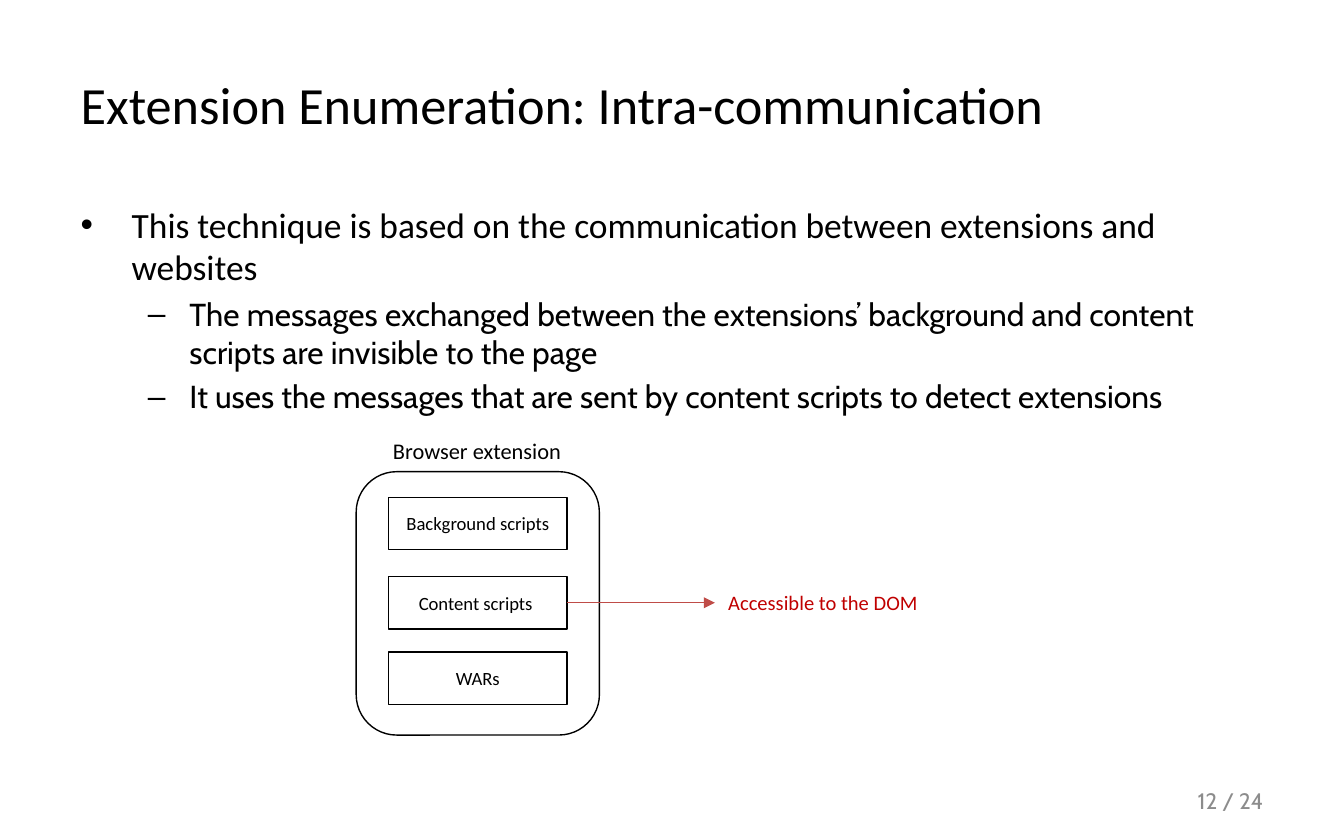
from dataclasses import dataclass
from pptx import Presentation
from pptx.dml.color import RGBColor as Rgb
from pptx.enum.shapes import MSO_CONNECTOR as Link, MSO_SHAPE as Kind
from pptx.enum.text import MSO_ANCHOR as Anchor, MSO_AUTO_SIZE as Fit, PP_ALIGN as Align
from pptx.oxml.ns import qn
from pptx.util import Emu, Pt
from lxml.etree import SubElement as Sub

PX = 9144
HUES = {"ink": "000000", "red": "C00000", "arrow": "BF4C48", "gray": "8C8C8C"}


@dataclass
class Look:
    size: int
    face: str = "Calibri"
    hue: str = "ink"
    align: Align = Align.LEFT


@dataclass
class Box:
    x: int
    y: int
    w: int
    h: int

    def emu(self) -> list[Emu]:
        return [Emu(n * PX) for n in (self.x, self.y, self.w, self.h)]


@dataclass
class Item:
    text: str
    level: int
    look: Look
    left: int
    hang: int


@dataclass
class Label:
    text: str
    box: Box
    look: Look
    form: dict


def color(name: str) -> Rgb:
    return Rgb.from_string(HUES[name])


def apply(obj, form: dict) -> None:
    for key, val in form.items():
        setattr(obj, key, val)


def place(shape, box: Box) -> None:
    apply(shape, dict(zip(("left", "top", "width", "height"), box.emu())))


def write(para, text: str, look: Look) -> None:
    para.alignment = look.align
    run = para.add_run()
    run.text = text
    apply(run.font, {"size": Pt(look.size), "name": look.face})
    run.font.color.rgb = color(look.hue)


def draw_box(slide, kind: Kind, box: Box):
    shape = slide.shapes.add_shape(kind, *box.emu())
    shape.shadow.inherit = False
    shape.fill.background()
    shape.line.color.rgb = color("ink")
    shape.line.width = Pt(0.75)
    return shape


def draw_label(slide, label: Label):
    shape = slide.shapes.add_textbox(*label.box.emu())
    apply(shape.text_frame, {"word_wrap": True, **label.form})
    write(shape.text_frame.paragraphs[0], label.text, label.look)
    return shape


def draw_arrow(slide, start, end) -> None:
    line = slide.shapes.add_connector(Link.STRAIGHT, 0, 0, 0, 0)
    line.begin_connect(start, 3)
    line.end_connect(end, 1)
    line.line.color.rgb = color("arrow")
    line.line.width = Pt(0.75)
    Sub(line.line._get_or_add_ln(), qn("a:tailEnd"), type="triangle")
    Sub(line._element.spPr, qn("a:effectLst"))


def fill_list(frame, items: list[Item]) -> None:
    apply(frame, {"auto_size": Fit.NONE, "word_wrap": True})
    for i, item in enumerate(items):
        para = frame.add_paragraph() if i else frame.paragraphs[0]
        para.level = item.level
        write(para, item.text, item.look)
        props = para._p.get_or_add_pPr()
        props.set("marL", str(item.left * PX))
        props.set("indent", str(-item.hang * PX))


SUB = Look(17, "Cabin")
ITEMS = [
    Item("This technique is based on the communication between extensions and websites",
         0, Look(19), 38, 38),
    Item("The messages exchanged between the extensions’ background and content scripts "
         "are invisible to the page", 1, SUB, 81, 31),
    Item("It uses the messages that are sent by content scripts to detect extensions",
         1, SUB, 81, 31),
]
PARTS = [("Background scripts", 370), ("Content scripts ", 429), ("WARs", 485)]
GROW = {"auto_size": Fit.SHAPE_TO_FIT_TEXT}
HEAD = Label("Browser extension", Box(282, 320, 146, 30),
             Look(12, align=Align.CENTER), GROW)
NOTE = Label("Accessible to the DOM", Box(532, 434, 307, 29), Look(11, hue="red"), GROW)
PAGE = Label("12 / 24", Box(717, 579, 233, 33), Look(12, "Cabin", "gray", Align.RIGHT),
             {"vertical_anchor": Anchor.MIDDLE})


def main() -> None:
    deck = Presentation()
    apply(deck, {"slide_width": Emu(1000 * PX), "slide_height": Emu(625 * PX)})
    slide = deck.slides.add_slide(deck.slide_layouts[1])
    title, body = slide.placeholders
    place(title, Box(50, 25, 900, 104))
    apply(title.text_frame, {"auto_size": Fit.NONE, "vertical_anchor": Anchor.MIDDLE})
    write(title.text_frame.paragraphs[0], "Extension Enumeration: Intra-communication",
          Look(28))
    place(body, Box(50, 146, 900, 412))
    fill_list(body.text_frame, ITEMS)

    draw_box(slide, Kind.ROUNDED_RECTANGLE, Box(265, 351, 181, 196))
    draw_label(slide, HEAD)
    boxes = {}
    for text, top in PARTS:
        shape = draw_box(slide, Kind.RECTANGLE, Box(289, top, 133, 39))
        apply(shape.text_frame, {"word_wrap": True, "vertical_anchor": Anchor.MIDDLE})
        write(shape.text_frame.paragraphs[0], text, Look(10, align=Align.CENTER))
        boxes[text.strip()] = shape
    note = draw_label(slide, NOTE)
    draw_arrow(slide, boxes["Content scripts"], note)
    draw_label(slide, PAGE)
    deck.save("out.pptx")


if __name__ == "__main__":
    main()
